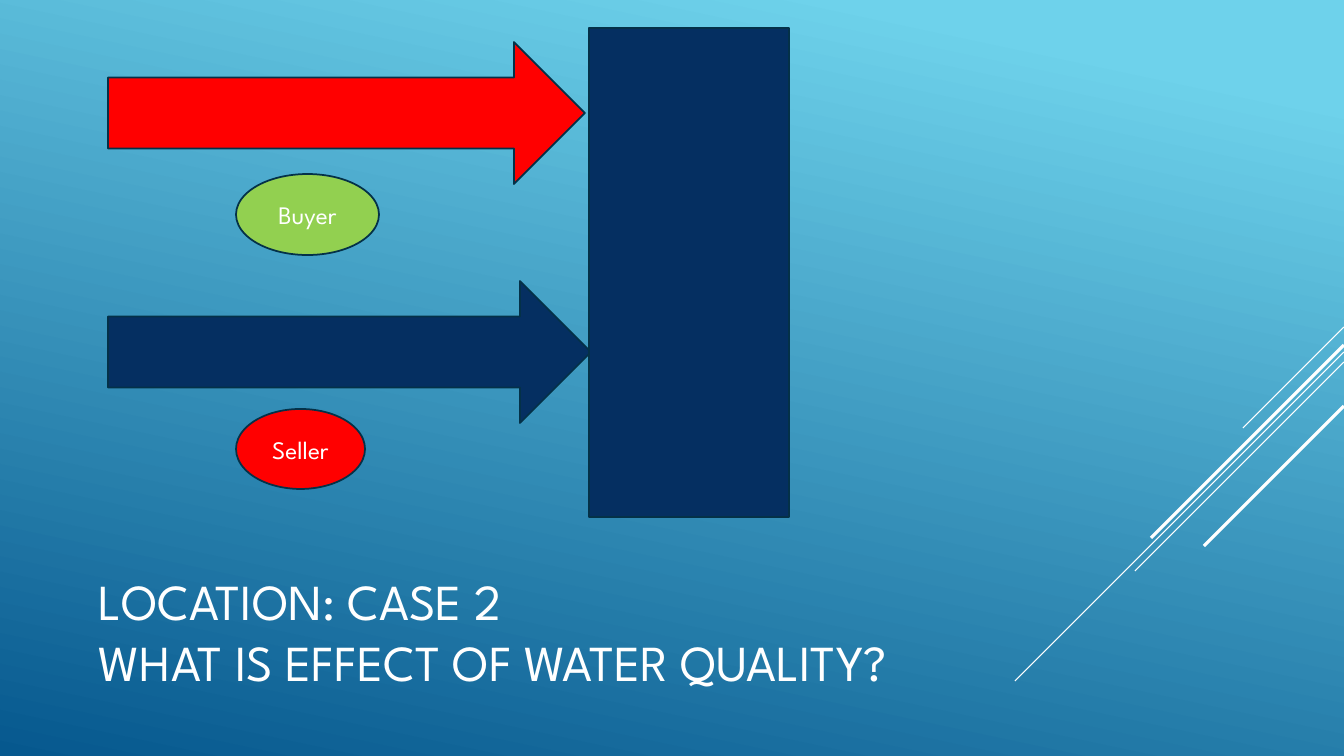
from pptx import Presentation
from pptx.dml.color import RGBColor
from pptx.enum.shapes import MSO_CONNECTOR, MSO_SHAPE
from pptx.enum.text import MSO_ANCHOR, PP_ALIGN
from pptx.oxml.ns import qn
from pptx.util import Pt
from lxml import etree

DOWN_ARROW, OVAL, RECT = MSO_SHAPE.DOWN_ARROW, MSO_SHAPE.OVAL, MSO_SHAPE.RECTANGLE
STRAIGHT = MSO_CONNECTOR.STRAIGHT
MIDDLE = MSO_ANCHOR.MIDDLE
CENTER, LEFT = PP_ALIGN.CENTER, PP_ALIGN.LEFT

# Content, lengths in px
WIDTH, HEIGHT = 1344, 756
SCALE = 12192000 / WIDTH
FONT = "League Spartan"
WHITE, NAVY, RED, GREEN, EDGE = "FFFFFF", "052F61", "FF0000", "92D050", "043148"
GRADIENT = [(0.1, "6ED2EB"), (1, "06588E")]
GRADIENT_ANGLE = 258

# Diagonals start at the right edge: top y, run, line width in pt
DIAGONALS = [(327, 101, 0.75), (352, 329, 0.75), (362, 209, 0.75),
             (345, 193, 2.25), (406, 140, 2.25)]
TITLE = "LOCATION: CASE 2\vWHAT IS EFFECT OF WATER QUALITY?"
TITLE_BOX = (89, 548, 940, 166)

# Kind, box as seen, fill, label, quarter-turned
SHAPES = [
    (DOWN_ARROW, (108, 42, 477, 142), RED, "", True),
    (DOWN_ARROW, (108, 281, 483, 142), NAVY, "", True),
    (OVAL, (236, 409, 129, 80), RED, "Seller", False),
    (OVAL, (236, 174, 143, 81), GREEN, "Buyer", False),
    (RECT, (589, 28, 200, 489), NAVY, "", True),
]


def px(*lengths):
    return [round(n * SCALE) for n in lengths]


def rgb(color):
    return RGBColor.from_string(color)


def turned(x, y, w, h):
    """Frame that fills the given box after a quarter turn."""
    return x + (w - h) / 2, y + (h - w) / 2, h, w


def write(sp, text, size, align):
    tf = sp.text_frame
    tf.word_wrap = True
    tf.vertical_anchor = MIDDLE
    p = tf.paragraphs[0]
    p.text = text
    p.alignment = align
    for r in p.runs:
        for name, value in {"name": FONT, "size": Pt(size)}.items():
            setattr(r.font, name, value)
        r.font.color.rgb = rgb(WHITE)


prs = Presentation()
prs.slide_width, prs.slide_height = px(WIDTH, HEIGHT)
s = prs.slides.add_slide(prs.slide_layouts[6])

# Background
fill = s.background.fill
fill.gradient()
fill.gradient_angle = GRADIENT_ANGLE
for stop, (position, color) in zip(fill.gradient_stops, GRADIENT):
    stop.position = position
    stop.color.rgb = rgb(color)

# Diagonal lines
for y, run, width in DIAGONALS:
    line = s.shapes.add_connector(STRAIGHT, *px(WIDTH, y, WIDTH - run, y + run))
    line.line.color.rgb = rgb(WHITE)
    line.line.width = Pt(width)
    etree.SubElement(line._element.spPr, qn("a:effectLst"))

# Title
write(s.shapes.add_textbox(*px(*TITLE_BOX)), TITLE, 36, LEFT)

# Arrows, ovals and block
for kind, box, color, label, is_turned in SHAPES:
    sp = s.shapes.add_shape(kind, *px(*(turned(*box) if is_turned else box)))
    sp.rotation = 270 if is_turned else 0
    sp.shadow.inherit = False
    sp.fill.solid()
    sp.fill.fore_color.rgb = rgb(color)
    sp.line.color.rgb = rgb(EDGE)
    sp.line.width = Pt(1.25)
    if label:
        write(sp, label, 18, CENTER)

prs.save("out.pptx")
